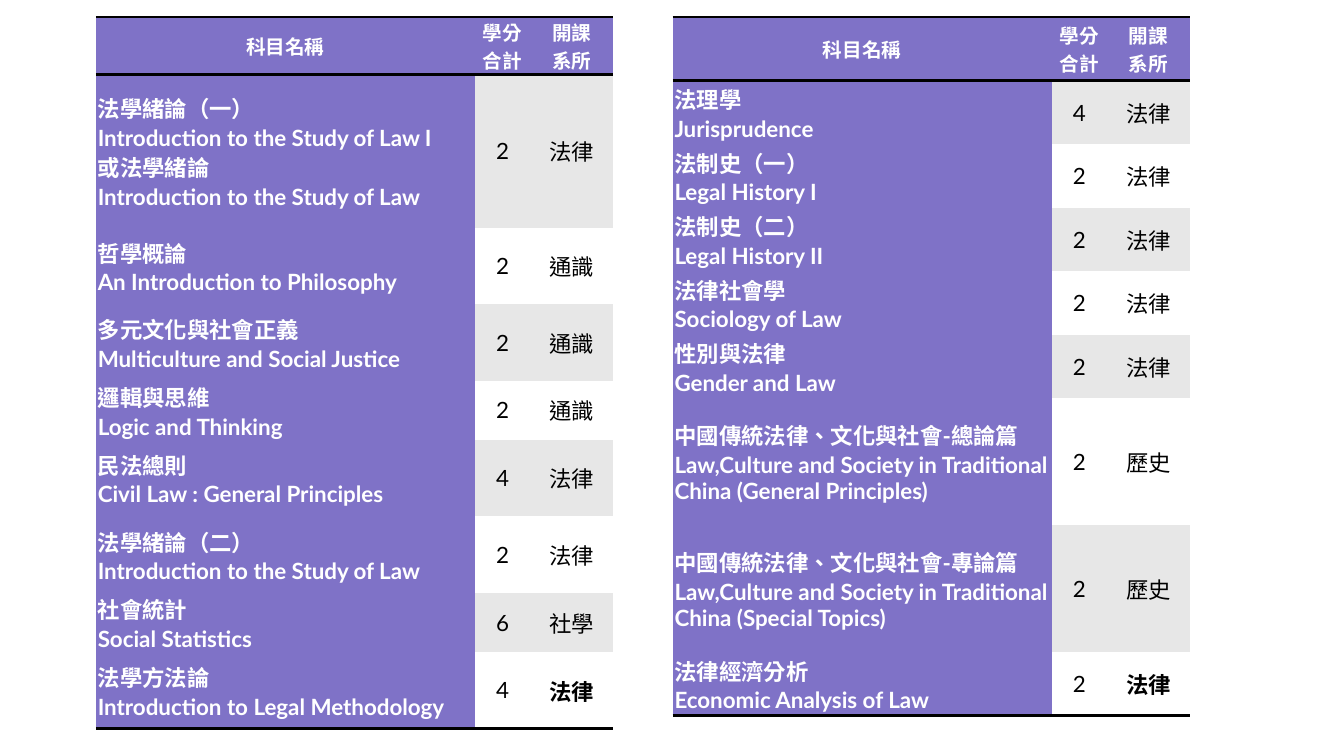
import pptx
import pptx.dml.color
import pptx.enum.lang
import pptx.enum.text
import pptx.oxml
import pptx.oxml.ns
import pptx.util

Inches = pptx.util.Inches
Pt = pptx.util.Pt
ALIGN = pptx.enum.text.PP_ALIGN
PURPLE, GREY, WHITE, BLACK = "7F72C7", "E7E7E7", "FFFFFF", "000000"
PLAIN_STYLE = "{2D5ABB26-0587-4C30-8999-92F81FD0307C}"
COLUMN_WIDTHS = (3.76, 0.55, 0.82)
TABLE_TOP, TABLE_HEIGHT = 0.17, 6.95
HEADINGS = (["科目名稱"], ["學分", "合計"], ["開課", "系所"])

BASIC_COURSES = [
    (1.52, ["法學緒論（一）", "Introduction to the Study of Law I",
            "或法學緒論", "Introduction to the Study of Law"], "2", "法律"),
    (0.76, ["哲學概論", "An Introduction to Philosophy"], "2", "通識"),
    (0.76, ["多元文化與社會正義", "Multiculture and Social Justice"], "2", "通識"),
    (0.51, ["邏輯與思維", "Logic and Thinking"], "2", "通識"),
    (0.76, ["民法總則", "Civil Law : General Principles"], "4", "法律"),
    (0.76, ["法學緒論（二）", "Introduction to the Study of Law"], "2", "法律"),
    (0.51, ["社會統計", "Social Statistics"], "6", "社學"),
    (0.76, ["法學方法論", "Introduction to Legal Methodology"], "4", "法律"),
]
THEORY_COURSES = [
    (0.63, ["法理學", "Jurisprudence"], "4", "法律"),
    (0.63, ["法制史（一）", "Legal History I"], "2", "法律"),
    (0.63, ["法制史（二）", "Legal History II"], "2", "法律"),
    (0.63, ["法律社會學", "Sociology of Law"], "2", "法律"),
    (0.63, ["性別與法律", "Gender and Law"], "2", "法律"),
    (1.26, ["中國傳統法律、文化與社會-總論篇",
            "Law,Culture and Society in Traditional China (General Principles)"],
     "2", "歷史"),
    (1.26, ["中國傳統法律、文化與社會-專論篇",
            "Law,Culture and Society in Traditional China (Special Topics)"],
     "2", "歷史"),
    (0.63, ["法律經濟分析", "Economic Analysis of Law"], "2", "法律"),
]


def color(value):
    return pptx.dml.color.RGBColor.from_string(value)


def set_values(target, values):
    for name, value in values.items():
        setattr(target, name, value)


def add_rule(cell, side):
    line = pptx.oxml.parse_xml(
        f'<a:{side} {pptx.oxml.ns.nsdecls("a")} w="{Pt(2)}">'
        f'<a:solidFill><a:srgbClr val="{BLACK}"/></a:solidFill></a:{side}>')
    cell._tc.get_or_add_tcPr().insert(0, line)


def fill_cell(cell, lines, fill, ink, size, bold, align):
    set_values(cell, {
        "margin_left": Inches(0.02), "margin_right": Inches(0.02),
        "margin_top": 0, "margin_bottom": 0,
        "vertical_anchor": pptx.enum.text.MSO_ANCHOR.MIDDLE,
    })
    cell.fill.solid()
    cell.fill.fore_color.rgb = color(fill)
    cell.text = "\n".join(lines)
    for para in cell.text_frame.paragraphs:
        para.alignment = align
        for span in para.runs:
            set_values(span.font, {
                "name": "Lato", "size": Pt(size), "bold": bold,
                "language_id": pptx.enum.lang.MSO_LANGUAGE_ID.TRADITIONAL_CHINESE,
            })
            span.font.color.rgb = color(ink)


def add_course_table(page, left, header_height, courses):
    frame = page.shapes.add_table(
        len(courses) + 1, len(COLUMN_WIDTHS), Inches(left), Inches(TABLE_TOP),
        Inches(sum(COLUMN_WIDTHS)), Inches(TABLE_HEIGHT))
    table = frame.table
    set_values(table, {"first_row": False, "horz_banding": False})
    table._tbl.tblPr.find(pptx.oxml.ns.qn("a:tableStyleId")).text = PLAIN_STYLE
    for column, width in zip(table.columns, COLUMN_WIDTHS):
        column.width = Inches(width)
    table.rows[0].height = Inches(header_height)
    for index, heading in enumerate(HEADINGS):
        cell = table.cell(0, index)
        fill_cell(cell, heading, PURPLE, WHITE, 14, True, ALIGN.CENTER)
        add_rule(cell, "lnB")
        add_rule(cell, "lnT")
    for index, (height, names, credits, department) in enumerate(courses, 1):
        table.rows[index].height = Inches(height)
        band = GREY if index % 2 else WHITE
        last = index == len(courses)
        fill_cell(table.cell(index, 0), names, PURPLE, WHITE, 16, True, ALIGN.LEFT)
        fill_cell(table.cell(index, 1), [credits], band, BLACK, 16, False, ALIGN.CENTER)
        fill_cell(table.cell(index, 2), [department], band, BLACK, 16, last, ALIGN.CENTER)
    for cell in table.rows[len(courses)].cells:
        add_rule(cell, "lnB")


def main():
    deck = pptx.Presentation()
    set_values(deck, {"slide_width": Inches(13.33), "slide_height": Inches(7.5)})
    page = deck.slides.add_slide(deck.slide_layouts[6])
    add_course_table(page, 0.95, 0.53, BASIC_COURSES)
    add_course_table(page, 6.67, 0.63, THEORY_COURSES)
    deck.save("out.pptx")


if __name__ == "__main__":
    main()
